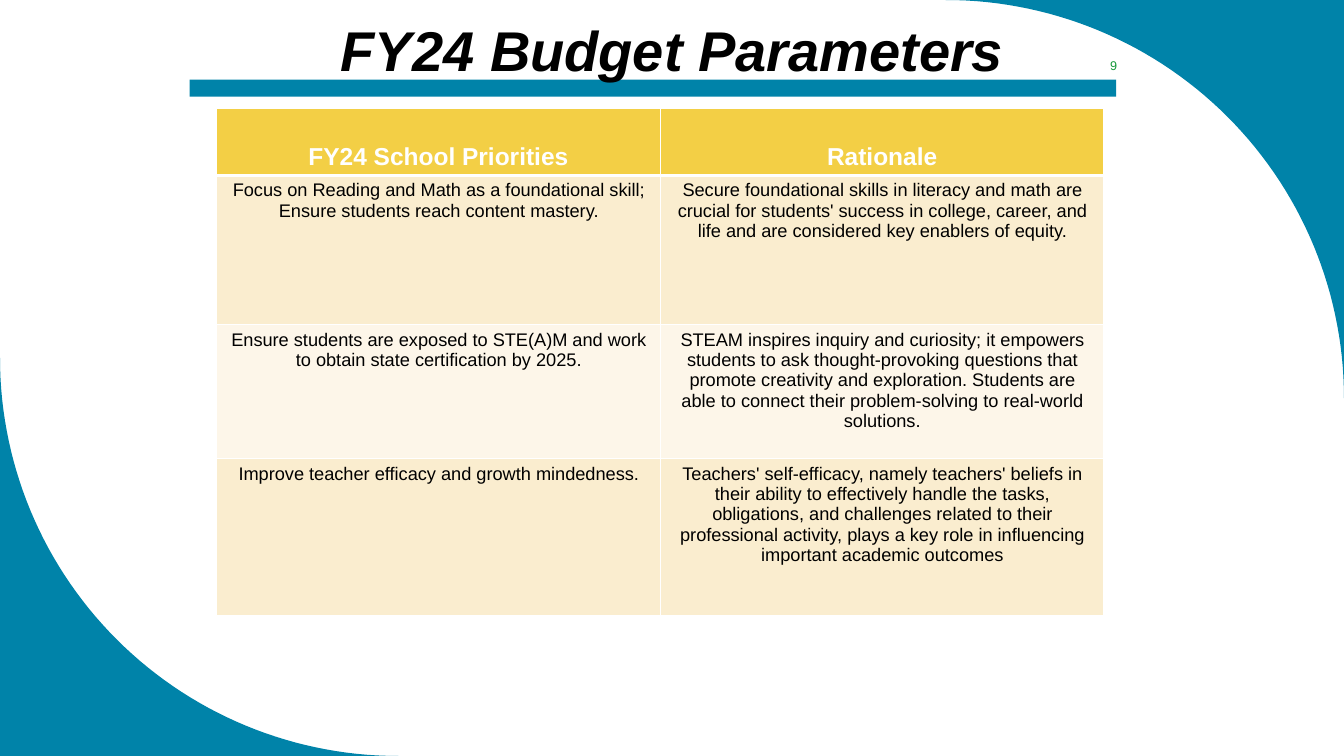
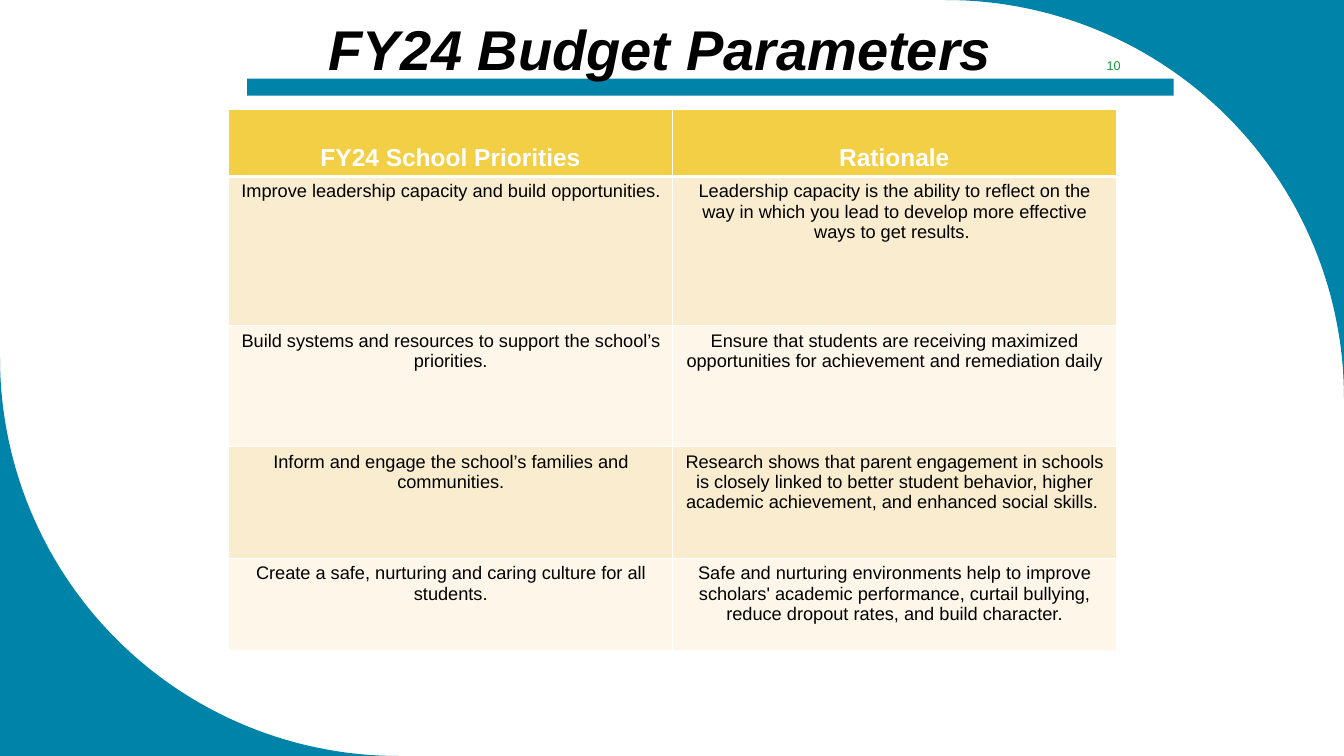
import math

from lxml import etree
from pptx import Presentation
from pptx.dml.color import RGBColor
from pptx.enum import shapes as shp, text as txt
from pptx.oxml import ns
from pptx.util import Inches, Pt

TEAL = RGBColor(0x00, 0x83, 0xA9)
GOLD = RGBColor(0xF3, 0xCF, 0x45)
SAND = RGBColor(0xFA, 0xED, 0xCF)
CREAM = RGBColor(0xFD, 0xF6, 0xE9)
GREEN = RGBColor(0x15, 0x98, 0x39)
BLACK = RGBColor(0x00, 0x00, 0x00)
WHITE = RGBColor(0xFF, 0xFF, 0xFF)

FONT = "Arial"
SLIDE_W, SLIDE_H = 13.33, 7.5
CORNER = 3.95
TITLE = "FY24 Budget Parameters"
HEADINGS = ("FY24 School Priorities", "Rationale")
NUMBER_BOX = (10.64, 0.5, 0.81, 0.3)

SLIDES = [
    dict(
        number="9",
        bar=(1.88, 0.79, 9.19, 0.17),
        title=(3.17, 0.1, 6.99, 0.77),
        table=(2.15, 1.08, 8.8),
        heights=(0.66, 1.48, 1.33, 1.56),
        priorities=[
            ("Focus on Reading and Math as a foundational skill; Ensure students "
             "reach content mastery.",
             "Secure foundational skills in literacy and math are crucial for "
             "students' success in college, career, and life and are considered "
             "key enablers of equity."),
            ("Ensure students are exposed to STE(A)M and work to obtain state "
             "certification by 2025.",
             "STEAM inspires inquiry and curiosity; it empowers students to ask "
             "thought-provoking questions that promote creativity and exploration. "
             "Students are able to connect their problem-solving to real-world "
             "solutions."),
            ("Improve teacher efficacy and growth mindedness.",
             "Teachers' self-efficacy, namely teachers' beliefs in their ability to "
             "effectively handle the tasks, obligations, and challenges related to "
             "their professional activity, plays a key role in influencing "
             "important academic outcomes"),
        ],
    ),
    dict(
        number="10",
        bar=(2.45, 0.78, 9.19, 0.17),
        title=(3.05, 0.09, 6.99, 0.77),
        table=(2.27, 1.09, 8.8),
        heights=(0.66, 1.48, 1.2, 1.11, 0.91),
        priorities=[
            ("Improve leadership capacity and build opportunities.",
             "Leadership capacity is the ability to reflect on the way in which you "
             "lead to develop more effective ways to get results. "),
            ("Build systems and resources to support the school’s priorities.",
             "Ensure that students are receiving maximized opportunities for "
             "achievement and remediation daily"),
            ("Inform and engage the school’s families and communities.",
             "Research shows that parent engagement in schools is closely linked to "
             "better student behavior, higher academic achievement, and enhanced "
             "social skills. "),
            ("Create a safe, nurturing and caring culture for all students.",
             "Safe and nurturing environments help to improve scholars' academic "
             "performance, curtail bullying, reduce dropout rates, and build "
             "character."),
        ],
    ),
]


def write(frame, words, size, color, bold=False, italic=False):
    """Put one centred run into a text frame."""
    frame.word_wrap = True
    paragraph = frame.paragraphs[0]
    paragraph.alignment = txt.PP_ALIGN.CENTER
    run = paragraph.add_run()
    run.text = words
    font = run.font
    font.name, font.size, font.bold, font.italic = FONT, Pt(size), bold, italic
    font.color.rgb = color


def paint(shape, color):
    shape.shadow.inherit = False
    shape.fill.solid()
    shape.fill.fore_color.rgb = color
    shape.line.fill.background()


def place(shape, box):
    shape.left, shape.top, shape.width, shape.height = map(Inches, box)


# Shared background: rounded corner cut-outs on the layout
def add_corner(slide, layout, tip, start):
    """Fill between a slide corner and the quarter circle facing it."""
    x, y = tip
    center_x = x - CORNER if x else CORNER
    center_y = y - CORNER if y else CORNER
    arc = []
    for step in range(61):
        angle = math.radians(start + 1.5 * step)
        arc.append((Inches(center_x + CORNER * math.cos(angle)),
                    Inches(center_y + CORNER * math.sin(angle))))
    builder = slide.shapes.build_freeform(Inches(x), Inches(y))
    builder.add_line_segments(arc, close=True)
    corner = builder.convert_to_shape()
    paint(corner, TEAL)
    layout.shapes.element.append(corner.element)


# Title, with the bar behind it
def add_heading(slide, title_box, bar_box):
    bar = slide.shapes.add_shape(shp.MSO_SHAPE.RECTANGLE, *map(Inches, bar_box))
    paint(bar, TEAL)
    slide.shapes.element.insert(2, bar.element)
    title = slide.shapes.title
    place(title, title_box)
    title.text_frame.vertical_anchor = txt.MSO_ANCHOR.TOP
    write(title.text_frame, TITLE, 40, BLACK, bold=True, italic=True)


def add_borders(cell, bottom):
    """White cell edges; they must come before the fill in the XML."""
    props = cell._tc.get_or_add_tcPr()
    for index, (side, width) in enumerate(
            (("lnL", 1), ("lnR", 1), ("lnT", 1), ("lnB", bottom))):
        edge = etree.Element(ns.qn(f"a:{side}"), w=str(Pt(width)))
        fill = etree.SubElement(edge, ns.qn("a:solidFill"))
        etree.SubElement(fill, ns.qn("a:srgbClr"), val=str(WHITE))
        props.insert(index, edge)


# Priorities table
def add_priorities(slide, box, heights, priorities):
    left, top, width = box
    rows = [HEADINGS, *priorities]
    table = slide.shapes.add_table(
        len(rows), len(HEADINGS), Inches(left), Inches(top),
        Inches(width), Inches(sum(heights))).table
    for column in table.columns:
        column.width = Inches(width / len(HEADINGS))
    for index, (height, words) in enumerate(zip(heights, rows)):
        table.rows[index].height = Inches(height)
        header = index == 0
        for cell, content in zip(table.rows[index].cells, words):
            cell.fill.solid()
            cell.fill.fore_color.rgb = GOLD if header else (CREAM, SAND)[index % 2]
            if header:
                cell.vertical_anchor = txt.MSO_ANCHOR.BOTTOM
                write(cell.text_frame, content, 17.5, WHITE, bold=True)
            else:
                write(cell.text_frame, content, 13, BLACK)
            add_borders(cell, bottom=3 if header else 1)


def add_number(slide, box, number):
    frame = slide.shapes.add_textbox(*map(Inches, box)).text_frame
    frame.vertical_anchor = txt.MSO_ANCHOR.MIDDLE
    write(frame, number, 9, GREEN)


def add_parameters_slide(prs, layout, content):
    slide = prs.slides.add_slide(layout)
    add_heading(slide, content["title"], content["bar"])
    add_priorities(slide, content["table"], content["heights"], content["priorities"])
    add_number(slide, NUMBER_BOX, content["number"])
    return slide


def main():
    prs = Presentation()
    prs.slide_width, prs.slide_height = Inches(SLIDE_W), Inches(SLIDE_H)
    layout = prs.slide_layouts[5]
    built = [add_parameters_slide(prs, layout, content) for content in SLIDES]
    add_corner(built[0], layout, (SLIDE_W, 0), start=270)
    add_corner(built[0], layout, (0, SLIDE_H), start=90)
    prs.save("out.pptx")


if __name__ == "__main__":
    main()
